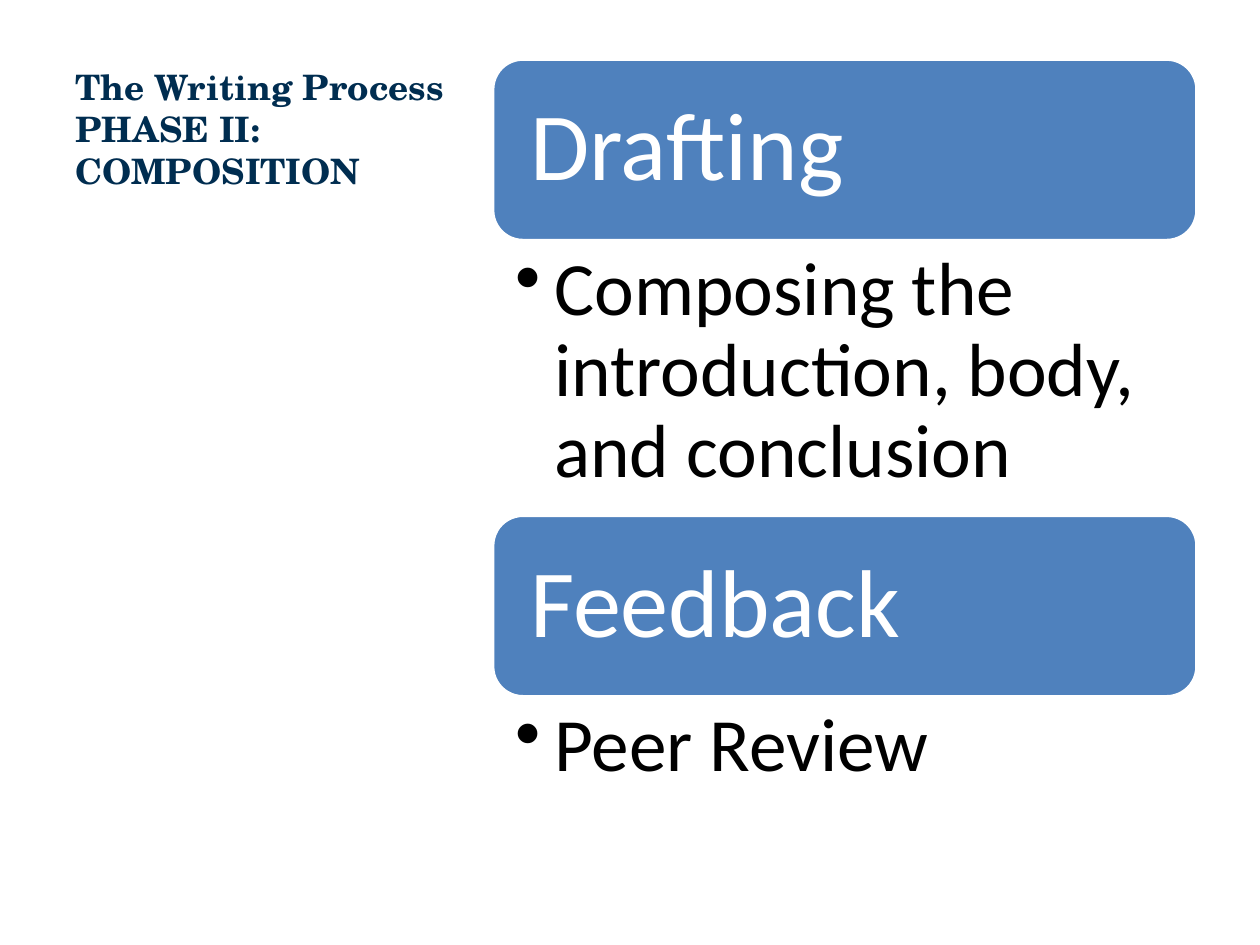
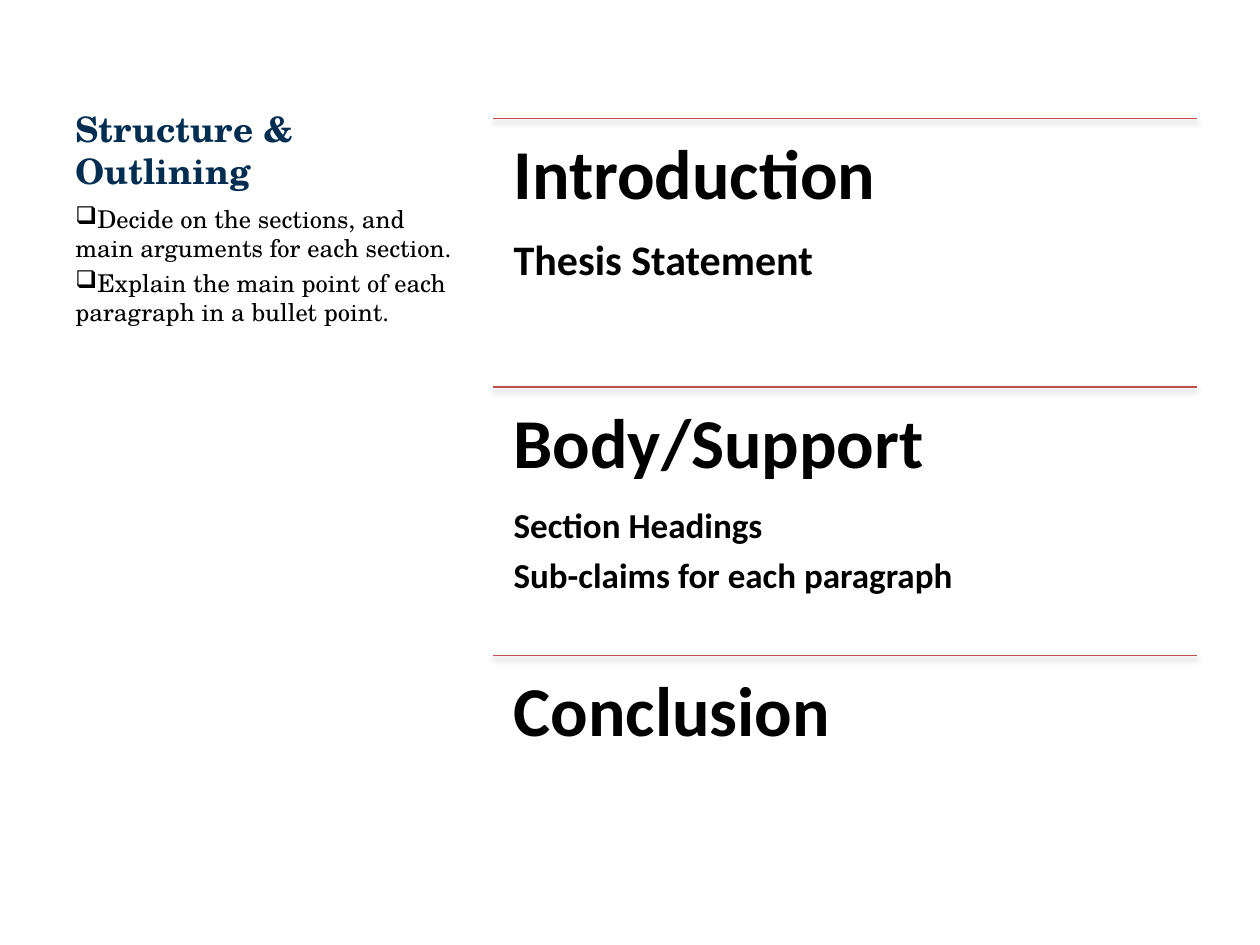
from lxml.etree import SubElement
from pptx import Presentation
from pptx.dml.color import RGBColor
from pptx.enum.shapes import MSO_CONNECTOR, MSO_SHAPE
from pptx.enum.text import MSO_ANCHOR, PP_ALIGN
from pptx.oxml.ns import qn
from pptx.util import Pt

DRAFT_TITLE = "The Writing Process \vPHASE II: COMPOSITION"
STAGES = [
    ("Drafting", "Composing the introduction, body, and conclusion", 157),
    ("Feedback", "Peer Review", 72),
]
OUTLINE_TITLE = "Structure & Outlining"
OUTLINE_TASKS = [
    "Decide on the sections, and main arguments for each section.",
    "Explain the main point of each paragraph in a bullet point.",
]
SECTIONS = [
    ("Introduction", ["Thesis Statement"], 24),
    ("Body/Support", ["Section Headings", "Sub-claims for each paragraph"], 20),
    ("Conclusion", [], 20),
]

NAVY, BLUE, RED, BLACK, WHITE = "002D50", "4F81BD", "C0504D", "000000", "FFFFFF"
SERIF, SANS = "TeX Gyre Schola", "Calibri"
SIDE_LEFT, SIDE_WIDTH = 36, 237
MAIN_LEFT, MAIN_WIDTH = 281.5, 402.5
TITLE_TOP, TITLE_HEIGHT = 21.6, 91.4
STAGE_TOP, STAGE_HEIGHT = 33.8, 103.7
SECTION_TOP, SECTION_HEIGHT = 67.7, 153.4


def color(value):
    return RGBColor.from_string(value)


def prepare(shape, insets=(7.2, 3.6, 7.2, 3.6), anchor=MSO_ANCHOR.TOP):
    frame = shape.text_frame
    frame.word_wrap = True
    frame.vertical_anchor = anchor
    (frame.margin_left, frame.margin_top,
     frame.margin_right, frame.margin_bottom) = map(Pt, insets)
    return frame


def add_box(page, left, top, width, height, **options):
    box = page.shapes.add_textbox(Pt(left), Pt(top), Pt(width), Pt(height))
    return prepare(box, **options)


def write(frame, text, size, font=SANS, fill=BLACK, bold=False,
          bullet=None, indent=0, spacing=None, before=0, after=0):
    first = not frame.text
    paragraph = frame.paragraphs[0] if first else frame.add_paragraph()
    paragraph.text = text
    paragraph.alignment = PP_ALIGN.LEFT
    paragraph.line_spacing = spacing
    paragraph.space_before = Pt(0 if first else before)
    paragraph.space_after = Pt(after)
    if bullet:
        properties = paragraph._p.get_or_add_pPr()
        properties.set("marL", str(Pt(indent)))
        properties.set("indent", str(-Pt(indent)))
        SubElement(properties, qn("a:buChar"), char=bullet)
    for span in paragraph.runs:
        span.font.name = font
        span.font.size = Pt(size)
        span.font.bold = bold
        span.font.color.rgb = color(fill)


def add_page(deck, title):
    page = deck.slides.add_slide(deck.slide_layouts[6])
    frame = add_box(page, SIDE_LEFT, TITLE_TOP, SIDE_WIDTH, TITLE_HEIGHT,
                    anchor=MSO_ANCHOR.BOTTOM)
    write(frame, title, 20, SERIF, NAVY, bold=True)
    return page


def add_stage(page, top, name, detail, detail_height):
    banner = page.shapes.add_shape(MSO_SHAPE.ROUNDED_RECTANGLE, Pt(MAIN_LEFT), Pt(top),
                                   Pt(MAIN_WIDTH), Pt(STAGE_HEIGHT))
    banner.shadow.inherit = False
    banner.fill.solid()
    banner.fill.fore_color.rgb = color(BLUE)
    banner.line.color.rgb = color(WHITE)
    banner.line.width = Pt(2)
    frame = prepare(banner, (16.5,) * 4, MSO_ANCHOR.MIDDLE)
    write(frame, name, 55, fill=WHITE, spacing=0.9)
    frame = add_box(page, MAIN_LEFT, top + STAGE_HEIGHT, MAIN_WIDTH, detail_height,
                    insets=(12.8, 5.5, 30.7, 5.5))
    write(frame, detail, 43, bullet="•", indent=22.5, spacing=0.9)


def add_rule(page, top):
    rule = page.shapes.add_connector(MSO_CONNECTOR.STRAIGHT, Pt(MAIN_LEFT), Pt(top),
                                     Pt(MAIN_LEFT + MAIN_WIDTH), Pt(top))
    rule.line.color.rgb = color(RED)
    rule.line.width = Pt(0.75)
    effects = SubElement(rule._element.spPr, qn("a:effectLst"))
    shadow = SubElement(effects, qn("a:outerShdw"), blurRad=str(Pt(3.1)),
                        dist=str(Pt(1.8)), dir="5400000", rotWithShape="0")
    tint = SubElement(shadow, qn("a:srgbClr"), val=BLACK)
    SubElement(tint, qn("a:alpha"), val="35000")


def add_section(page, top, name, points, size):
    add_rule(page, top)
    frame = add_box(page, MAIN_LEFT, top, MAIN_WIDTH, SECTION_HEIGHT, insets=(12,) * 4)
    write(frame, name, 40, bold=True, spacing=0.9, after=14)
    for point in points:
        write(frame, point, size, bold=True, spacing=0.9, after=size * 0.35)


def main():
    deck = Presentation()
    deck.slide_width, deck.slide_height = Pt(720), Pt(540)

    page = add_page(deck, DRAFT_TITLE)
    top = STAGE_TOP
    for name, detail, detail_height in STAGES:
        add_stage(page, top, name, detail, detail_height)
        top += STAGE_HEIGHT + detail_height

    page = add_page(deck, OUTLINE_TITLE)
    frame = add_box(page, SIDE_LEFT, TITLE_TOP + TITLE_HEIGHT, SIDE_WIDTH, 369.4)
    for task in OUTLINE_TASKS:
        write(frame, task, 14, SERIF, bullet="❑", before=2.8)
    for index, section in enumerate(SECTIONS):
        add_section(page, SECTION_TOP + index * SECTION_HEIGHT, *section)

    deck.save("out.pptx")


if __name__ == "__main__":
    main()
